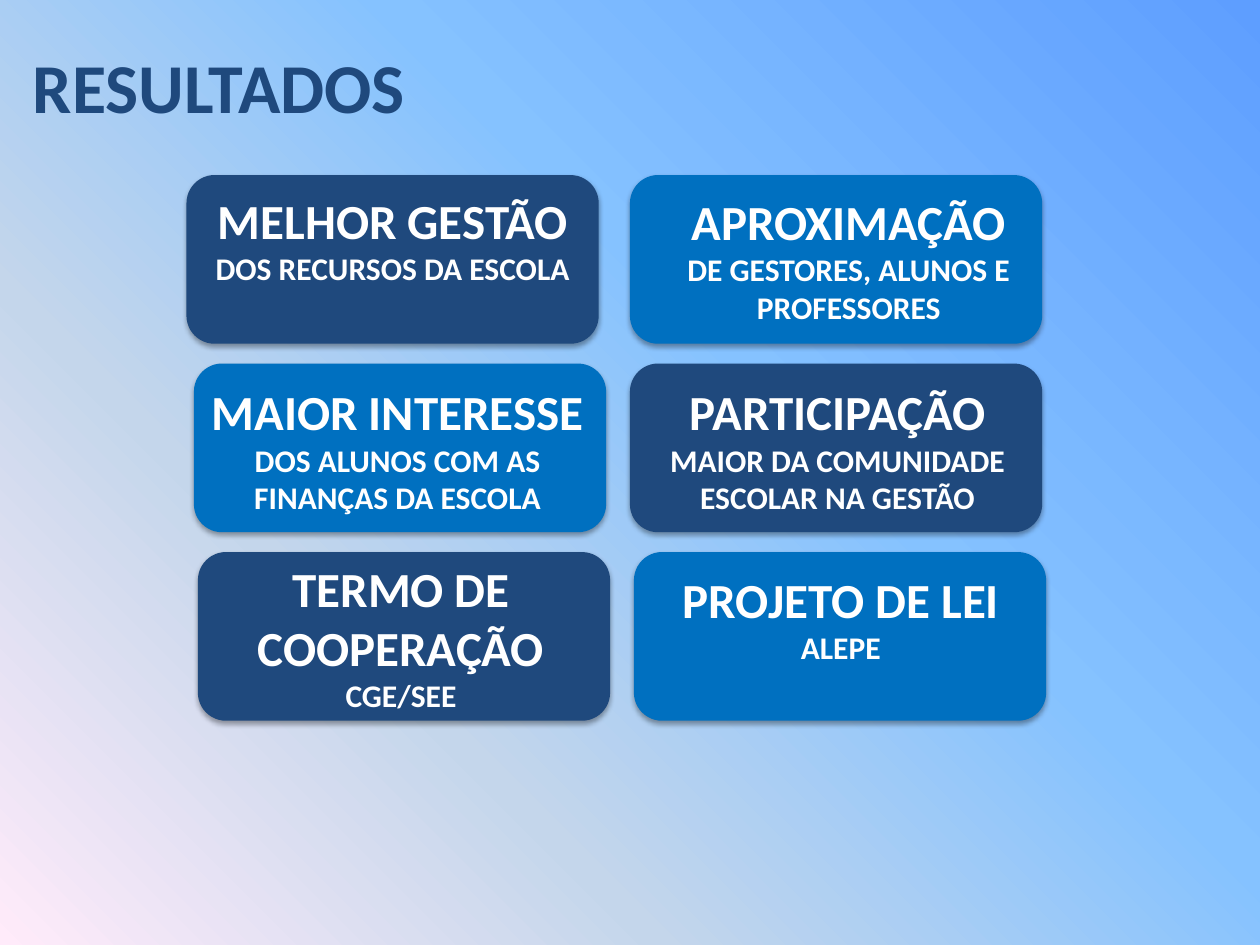
import pptx
import pptx.dml.color
import pptx.enum.shapes
import pptx.enum.text
import pptx.oxml.ns
import pptx.util
from lxml import etree

Cm = pptx.util.Cm
Pt = pptx.util.Pt
RGBColor = pptx.dml.color.RGBColor
ALIGN = pptx.enum.text.PP_ALIGN
qn = pptx.oxml.ns.qn

NAVY = RGBColor(0x1F, 0x49, 0x7D)
BLUE = RGBColor(0x00, 0x70, 0xC0)
WHITE = RGBColor(0xFF, 0xFF, 0xFF)
BLACK = RGBColor(0x00, 0x00, 0x00)
SKY = [
    (0, RGBColor(0x5E, 0x9E, 0xFF)),
    (40, RGBColor(0x85, 0xC2, 0xFF)),
    (70, RGBColor(0xC4, 0xD6, 0xEB)),
    (100, RGBColor(0xFF, 0xEB, 0xFA)),
]

CARD_WIDTH, CARD_HEIGHT = 8.31, 3.4
FIRST_ROW, ROW_STEP = 3.53, 3.8

# Each row: card left, then text left, top, width, height, and the lines.
CARDS = [
    [(3.76, (3.71, 3.71, 8.41, 2.2), ["MELHOR GESTÃO", "DOS RECURSOS DA ESCOLA"]),
     (12.7, (13.11, 3.73, 8, 3), ["APROXIMAÇÃO", "DE GESTORES, ALUNOS E PROFESSORES"])],
    [(3.91, (3.71, 7.57, 8.61, 3.76),
      ["MAIOR INTERESSE", "DOS ALUNOS COM AS FINANÇAS DA ESCOLA"]),
     (12.7, (12.29, 7.57, 9.19, 3.76),
      ["PARTICIPAÇÃO", "MAIOR DA COMUNIDADE", "ESCOLAR NA GESTÃO"])],
    [(3.99, (3.78, 11.13, 8.61, 4.19), ["TERMO DE COOPERAÇÃO", "CGE/SEE"]),
     (12.78, (12.9, 11.35, 8.1, 3), ["PROJETO DE LEI", "ALEPE"])],
]


class SlideBuilder:
    """Holds the text style and the current slide."""
    font_name = "Calibri"
    heading_size = 28
    detail_size = 18

    def __init__(self, page):
        self.page = page

    def background(self, stops):
        fill = self.page.background.fill
        fill.gradient()
        fill.gradient_angle = 225
        stop_list = self.page.element.find(".//" + qn("a:gsLst"))
        for stop in list(stop_list):
            stop_list.remove(stop)
        for position, color in stops:
            stop = etree.SubElement(stop_list, qn("a:gs"), pos=str(position * 1000))
            etree.SubElement(stop, qn("a:srgbClr"), val=str(color))

    def add_text(self, para, text, size, color, align):
        para.alignment = align
        span = para.add_run()
        span.text = text
        style = {"name": self.font_name, "size": Pt(size), "bold": True}
        for name, value in style.items():
            setattr(span.font, name, value)
        span.font.color.rgb = color

    def title(self, text, left, top, width, height):
        box = self.page.shapes.title
        place = {"left": left, "top": top, "width": width, "height": height}
        for name, value in place.items():
            setattr(box, name, Cm(value))
        box.text_frame.vertical_anchor = pptx.enum.text.MSO_ANCHOR.TOP
        self.add_text(box.text_frame.paragraphs[0], text, 40, NAVY, ALIGN.LEFT)

    def card(self, left, top, color):
        card = self.page.shapes.add_shape(
            pptx.enum.shapes.MSO_SHAPE.ROUNDED_RECTANGLE,
            Cm(left), Cm(top), Cm(CARD_WIDTH), Cm(CARD_HEIGHT))
        card.fill.solid()
        card.fill.fore_color.rgb = color
        card.line.fill.background()
        self.soft_shadow(card)

    def soft_shadow(self, shape):
        shape.shadow.inherit = False
        effects = shape.element.spPr.find(qn("a:effectLst"))
        shadow = etree.SubElement(
            effects, qn("a:outerShdw"), blurRad=str(Pt(3.1)), dist=str(Pt(1.8)),
            dir="5400000", rotWithShape="0")
        shade = etree.SubElement(shadow, qn("a:srgbClr"), val=str(BLACK))
        etree.SubElement(shade, qn("a:alpha"), val="35000")

    def caption(self, place, lines):
        """Add a centred text box: a large heading over smaller details."""
        box = self.page.shapes.add_textbox(*map(Cm, place))
        frame = box.text_frame
        frame.word_wrap = True
        frame.auto_size = pptx.enum.text.MSO_AUTO_SIZE.SHAPE_TO_FIT_TEXT
        for index, line in enumerate(lines):
            para = frame.add_paragraph() if index else frame.paragraphs[0]
            size = self.detail_size if index else self.heading_size
            self.add_text(para, line, size, WHITE, ALIGN.CENTER)


def main():
    deck = pptx.Presentation()
    deck.slide_width, deck.slide_height = Cm(25.4), Cm(19.05)
    builder = SlideBuilder(deck.slides.add_slide(deck.slide_layouts[5]))
    builder.background(SKY)
    builder.title("RESULTADOS", 0.41, 0.74, 24.41, 1.96)
    for row, cards in enumerate(CARDS):
        for column, (left, text_place, lines) in enumerate(cards):
            color = BLUE if (row + column) % 2 else NAVY
            builder.card(left, FIRST_ROW + row * ROW_STEP, color)
            builder.caption(text_place, lines)
    deck.save("out.pptx")


if __name__ == "__main__":
    main()
